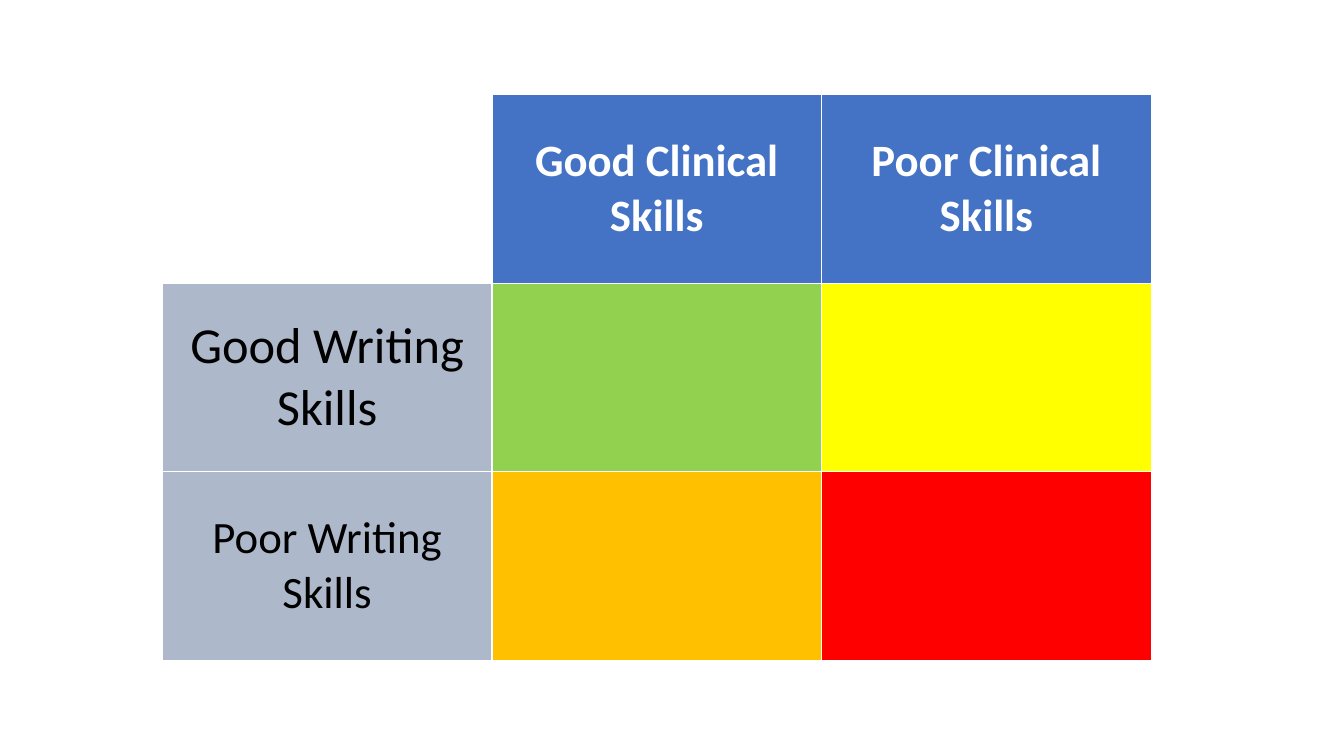
from pptx import Presentation
from pptx.dml.color import RGBColor
from pptx.enum.text import MSO_ANCHOR, PP_ALIGN
from pptx.util import Inches, Pt

CENTER = PP_ALIGN.CENTER
MIDDLE = MSO_ANCHOR.MIDDLE

THEME = {
    "font": "Calibri",
    "normal": 32,
    "large": 36,
    "white": "FFFFFF",
    "black": "000000",
    "header": "4472C4",
    "label": "ADB9CA",
    "green": "92D050",
    "yellow": "FFFF00",
    "orange": "FFC000",
    "red": "FF0000",
}

# Each cell: text, fill, type size
SKILLS_MATRIX = [
    [("", "white", "normal"),
     ("Good Clinical Skills", "header", "normal"),
     ("Poor Clinical Skills", "header", "normal")],
    [("Good Writing Skills", "label", "large"),
     ("", "green", "normal"),
     ("", "yellow", "normal")],
    [("Poor Writing Skills", "label", "normal"),
     ("", "orange", "normal"),
     ("", "red", "normal")],
]

TABLE_LEFT, TABLE_TOP = 1.61, 0.94
COLUMN_WIDTH, ROW_HEIGHT = 3.27, 1.87


def theme_color(name):
    return RGBColor.from_string(THEME[name])


def fill_cell(cell, text, fill, size, is_header):
    cell.fill.solid()
    cell.fill.fore_color.rgb = theme_color(fill)
    cell.vertical_anchor = MIDDLE
    if not text:
        return
    paragraph = cell.text_frame.paragraphs[0]
    paragraph.alignment = CENTER
    run = paragraph.add_run()
    run.text = text
    run.font.name = THEME["font"]
    run.font.size = Pt(THEME[size])
    run.font.bold = is_header
    run.font.color.rgb = theme_color("white" if is_header else "black")


def add_skills_table(slide):
    """Add the matrix; the default table style supplies its white rules."""
    row_count, column_count = len(SKILLS_MATRIX), len(SKILLS_MATRIX[0])
    table = slide.shapes.add_table(
        row_count, column_count, Inches(TABLE_LEFT), Inches(TABLE_TOP),
        Inches(COLUMN_WIDTH * column_count), Inches(ROW_HEIGHT * row_count),
    ).table
    for row_index, row in enumerate(SKILLS_MATRIX):
        for column_index, (text, fill, size) in enumerate(row):
            fill_cell(table.cell(row_index, column_index),
                      text, fill, size, is_header=row_index == 0)


def main():
    presentation = Presentation()
    presentation.slide_width = Inches(13.33)
    presentation.slide_height = Inches(7.5)
    slide = presentation.slides.add_slide(presentation.slide_layouts[6])
    add_skills_table(slide)
    presentation.save("out.pptx")


if __name__ == "__main__":
    main()
